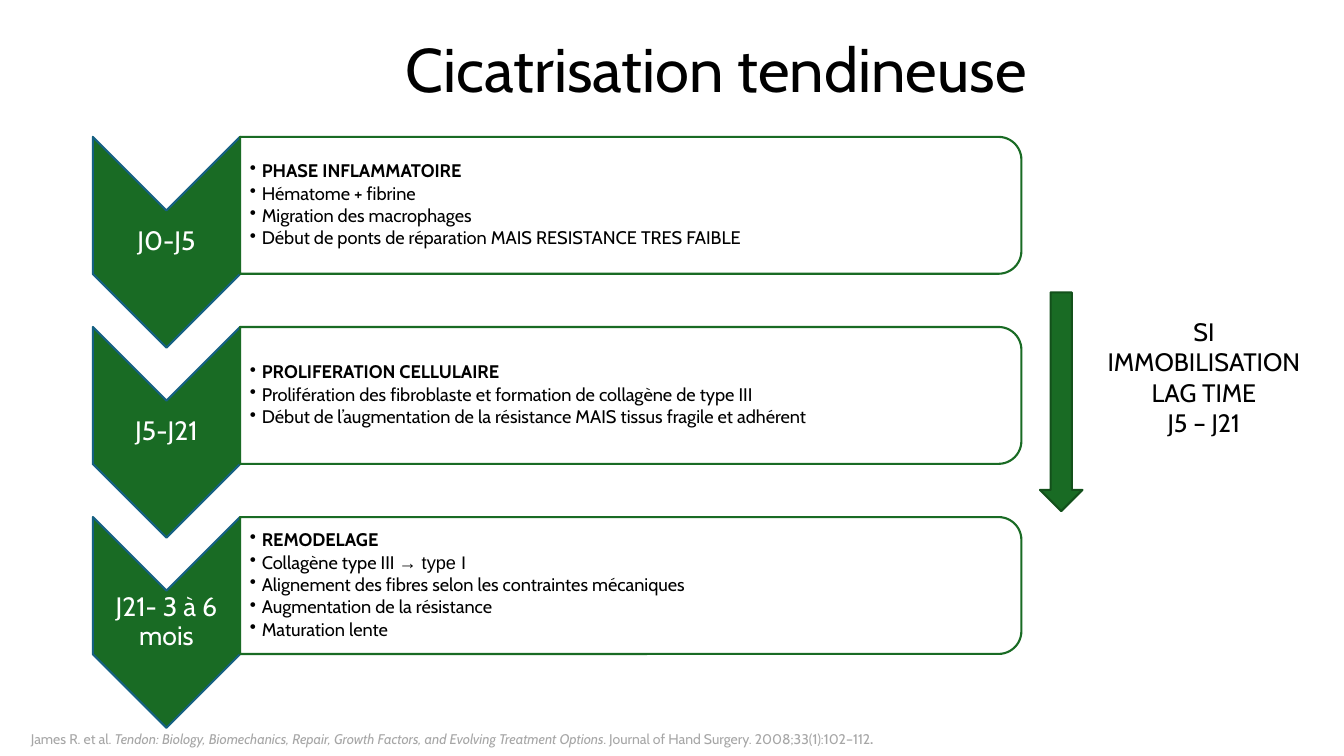
from lxml import etree
from pptx import Presentation
from pptx.dml.color import RGBColor
from pptx.enum.shapes import MSO_SHAPE
from pptx.enum.text import MSO_ANCHOR, PP_ALIGN
from pptx.oxml.ns import qn
from pptx.util import Cm, Pt

CHEVRON, DOWN_ARROW = MSO_SHAPE.CHEVRON, MSO_SHAPE.DOWN_ARROW
ROUND_TWO = MSO_SHAPE.ROUND_2_SAME_RECTANGLE
LEFT, CENTER = PP_ALIGN.LEFT, PP_ALIGN.CENTER
TOP, MIDDLE = MSO_ANCHOR.TOP, MSO_ANCHOR.MIDDLE
FONT = "Cabin"
GREEN, DARK_GREEN, BLUE = "196B24", "13501B", "156082"
WHITE, BLACK, GREY = "FFFFFF", "000000", "A6A6A6"
BOLD, ITALIC = {"bold": True}, {"italic": True}

PHASES = [
    ("J0-J5", [
        [("PHASE INFLAMMATOIRE", BOLD)],
        "Hématome + fibrine",
        "Migration des macrophages",
        "Début de ponts de réparation MAIS RESISTANCE TRES FAIBLE",
    ]),
    ("J5-J21", [
        [("PROLIFERATION CELLULAIRE", BOLD)],
        "Prolifération des fibroblaste et formation de collagène de type III",
        "Début de l’augmentation de la résistance MAIS tissus fragile et adhérent",
    ]),
    ("J21- 3 à 6 mois", [
        [("REMODELAGE", BOLD)],
        [("Collagène type III ", {}), ("→ type I", {"name": "Arial"})],
        "Alignement des fibres selon les contraintes mécaniques",
        "Augmentation de la résistance",
        "Maturation lente",
    ]),
]
REFERENCE = [
    ("James R. et al. ", {}),
    ("Tendon: Biology, Biomechanics, Repair, Growth Factors, "
     "and Evolving Treatment Options", ITALIC),
    (". Journal of Hand Surgery. 2008;33(1):102–112", {}),
    (".", BOLD),
]


def rgb(color):
    """Turn a hex string into a colour."""
    return RGBColor.from_string(color)


def add_bullet(p):
    """Give a paragraph a hanging round bullet."""
    pPr = p._p.get_or_add_pPr()
    pPr.set("marL", str(Cm(0.3)))
    pPr.set("indent", str(-Cm(0.3)))
    etree.SubElement(pPr, qn("a:buChar")).set("char", "•")


def add_text(s, box, paragraphs, size, color, align=LEFT, anchor=TOP,
             margins=None, spacing=None, after=None, bullets=False):
    """Place a text box whose paragraphs are strings or lists of (text, format) runs."""
    tf = s.shapes.add_textbox(*map(Cm, box)).text_frame
    tf.word_wrap, tf.vertical_anchor = True, anchor
    if margins:
        tf.margin_left, tf.margin_top, tf.margin_right, tf.margin_bottom = map(Cm, margins)
    for i, runs in enumerate(paragraphs):
        p = tf.paragraphs[0] if i == 0 else tf.add_paragraph()
        if bullets:
            add_bullet(p)
        for key, value in {"alignment": align, "line_spacing": spacing,
                           "space_after": after}.items():
            setattr(p, key, value)
        for text, extra in [(runs, {})] if isinstance(runs, str) else runs:
            r = p.add_run()
            r.text = text
            r.font.color.rgb = rgb(color)
            for key, value in {"name": FONT, "size": Pt(size), **extra}.items():
                setattr(r.font, key, value)


def add_outlined(s, kind, box, fill, line, turned=False):
    """Draw a filled preset that covers the box, turned a quarter if asked."""
    x, y, w, h = box
    if turned:
        x, y, w, h = x + (w - h) / 2, y + (h - w) / 2, h, w
    sp = s.shapes.add_shape(kind, *map(Cm, (x, y, w, h)))
    sp.rotation = 90 if turned else 0
    sp.shadow.inherit = False
    sp.fill.solid()
    sp.fill.fore_color.rgb = rgb(fill)
    sp.line.color.rgb = rgb(line)
    sp.line.width = Pt(1.5)
    return sp


def add_phase(s, box, period, facts):
    """Draw one healing phase: a chevron with its period and a panel of facts."""
    x, y, w, h = box
    chevron_w, chevron_h, panel_h = 3.71, h, 3.45
    panel_x, panel_w = x + chevron_w, w - chevron_w
    add_outlined(s, CHEVRON, (x, y, chevron_w, chevron_h), GREEN, BLUE, True)
    add_text(s, (x, y + chevron_w / 2, chevron_w, chevron_h - chevron_w), [period],
             19, WHITE, CENTER, MIDDLE, [0.03] * 4, 0.9, Pt(6.65))
    panel = add_outlined(s, ROUND_TWO, (panel_x, y, panel_w, panel_h), WHITE, GREEN, True)
    color = panel.fill._xPr.find(".//" + qn("a:srgbClr"))
    etree.SubElement(color, qn("a:alpha")).set("val", "90000")
    add_text(s, (panel_x, y + 0.18, panel_w - 0.17, panel_h - 0.36), facts,
             13, BLACK, LEFT, MIDDLE, (0.25, 0.03, 0.03, 0.03), 0.9, Pt(1.95), True)


def add_lag_time(s, box):
    """Draw the arrow and the note about immobilisation beside it."""
    x, y, w, h = box
    add_outlined(s, DOWN_ARROW, (x, y, 1.07, h), GREEN, DARK_GREEN)
    add_text(s, (x + 1.45, y + 0.48, w - 1.45, 3.33),
             ["SI IMMOBILISATION", "LAG TIME", "J5 – J21"], 18, BLACK, CENTER)


def main():
    """Build the slide and save it."""
    prs = Presentation()
    prs.slide_width, prs.slide_height = Cm(33.87), Cm(19.05)
    s = prs.slides.add_slide(prs.slide_layouts[6])
    add_text(s, (1.85, 0, 32.41, 3.68), ["Cicatrisation tendineuse"],
             44, BLACK, CENTER, MIDDLE, spacing=0.9)
    for i, (period, facts) in enumerate(PHASES):
        add_phase(s, (2.34, 3.45 + 4.79 * i, 23.4, 5.31), period, facts)
    add_lag_time(s, (26.21, 7.37, 6.81, 5.51))
    add_text(s, (0.53, 18.29, 30.61, 0.69), [REFERENCE], 10, GREY)
    prs.save("out.pptx")


if __name__ == "__main__":
    main()
